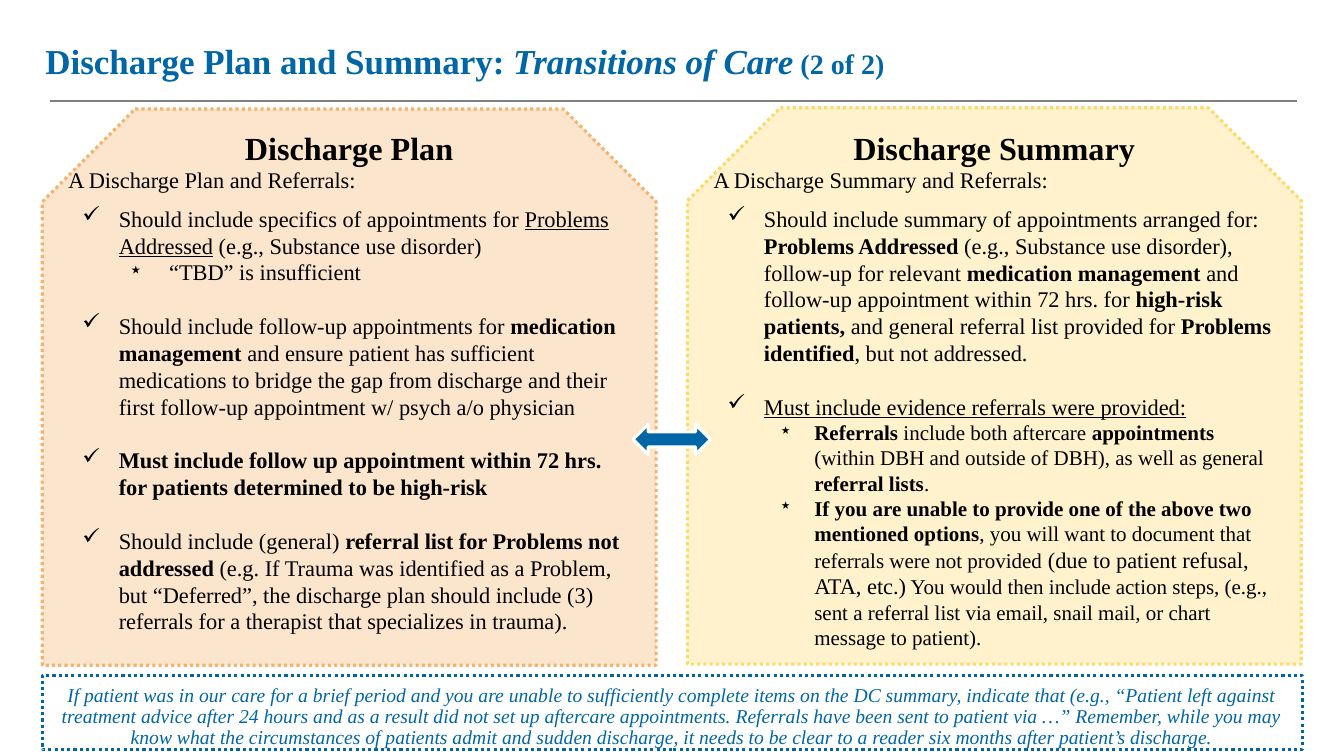
import pptx
import pptx.util
import pptx.dml.color
import pptx.enum.dml
import pptx.enum.shapes
import pptx.enum.text
import pptx.oxml.ns
import lxml.etree

Pt = pptx.util.Pt
SHAPE = pptx.enum.shapes.MSO_SHAPE
ALIGN = pptx.enum.text.PP_ALIGN
ANCHOR = pptx.enum.text.MSO_ANCHOR

COLORS = {
    "blue": "0066A6", "black": "000000", "white": "FFFFFF", "rule": "7F7F7F",
    "peach": "FCE5CD", "orange": "F6B26B", "cream": "FFF2CC", "yellow": "FFD966",
}
GAP = 19.1  # space between groups of bullets
B = {"bold": True}
U = {"underline": True}
SMALL = {"size": 15}
SMALL_B = {"size": 15, "bold": True}


def rgb(name):
    return pptx.dml.color.RGBColor.from_string(COLORS[name])


def add_run(p, text, size=16, color="black", bold=False, italic=False, underline=False):
    r = p.add_run()
    r.text = text
    r.font.name = "Times New Roman"
    r.font.size = Pt(size)
    r.font.color.rgb = rgb(color)
    r.font.bold, r.font.italic, r.font.underline = bold, italic, underline


class SlideBuilder:
    def __init__(self, prs):
        self.slide = prs.slides.add_slide(prs.slide_layouts[5])
        self.shapes = self.slide.shapes

    def frame(self, sp, inset_y=7.2, anchor=ANCHOR.TOP):
        tf = sp.text_frame
        tf.word_wrap = True
        tf.auto_size = pptx.enum.text.MSO_AUTO_SIZE.NONE
        tf.vertical_anchor = anchor
        tf.margin_left = tf.margin_right = Pt(7.2)
        tf.margin_top = tf.margin_bottom = Pt(inset_y)
        return tf

    def paragraph(self, p, runs, align=ALIGN.LEFT, before=0, spacing=None,
                  bullet=None, indent=0, hanging=0, level=0):
        if bullet:
            pPr = p._p.get_or_add_pPr()
            pPr.set("marL", str(Pt(indent)))
            pPr.set("indent", str(-Pt(hanging)))
            qn = pptx.oxml.ns.qn
            clr = lxml.etree.SubElement(pPr, qn("a:buClr"))
            lxml.etree.SubElement(clr, qn("a:srgbClr"), val=COLORS["black"])
            lxml.etree.SubElement(pPr, qn("a:buChar"), char=bullet)
        p.level = level
        p.alignment = align
        p.space_before = Pt(before)
        if spacing:
            p.line_spacing = spacing
        for text, fmt in runs:
            add_run(p, text, **fmt)

    def title(self, box, runs):
        sp = self.shapes.title
        sp.left, sp.top, sp.width, sp.height = map(Pt, box)
        tf = self.frame(sp, 3.6, ANCHOR.MIDDLE)
        self.paragraph(tf.paragraphs[0], runs, spacing=0.9)

    def shape(self, kind, box, fill, line, dotted=False, adjust=()):
        sp = self.shapes.add_shape(kind, *map(Pt, box))
        sp.shadow.inherit = False
        if fill:
            sp.fill.solid()
            sp.fill.fore_color.rgb = rgb(fill)
        else:
            sp.fill.background()
        sp.line.color.rgb = rgb(line)
        sp.line.width = Pt(2.25)
        if dotted:
            sp.line.dash_style = pptx.enum.dml.MSO_LINE.ROUND_DOT
        for i, value in enumerate(adjust):
            sp.adjustments[i] = value
        return sp

    def rule(self, x1, x2, y):
        line = self.shapes.add_connector(
            pptx.enum.shapes.MSO_CONNECTOR.STRAIGHT, Pt(x1), Pt(y), Pt(x2), Pt(y))
        line.line.color.rgb = rgb("rule")
        line.line.width = Pt(1.5)
        lxml.etree.SubElement(line._element.spPr, pptx.oxml.ns.qn("a:effectLst"))

    def text(self, box, paragraphs):
        tf = self.frame(self.shapes.add_textbox(*map(Pt, box)))
        for i, (runs, fmt) in enumerate(paragraphs):
            p = tf.add_paragraph() if i else tf.paragraphs[0]
            self.paragraph(p, runs, **fmt)


def check(*runs, before=GAP):
    return runs, {"bullet": "✓", "indent": 36, "hanging": 26, "before": before}


def star(*runs, hanging=25.2):
    return runs, {"bullet": "⋆", "indent": 72, "hanging": hanging, "level": 1}


def heading(name):
    return [
        ([(name, {"size": 23, "bold": True})], {"align": ALIGN.CENTER}),
        ([(f"A {name} and Referrals:", {})], {}),
    ]


PLAN = heading("Discharge Plan") + [
    check(("Should include specifics of appointments for ", {}),
          ("Problems Addressed", U),
          (" (e.g., Substance use disorder)", {}), before=8.2),
    star(("“TBD” is insufficient", {}), hanging=28.8),
    check(("Should include follow-up appointments for ", {}),
          ("medication management ", B),
          ("and ensure patient has sufficient medications to bridge the gap from "
           "discharge and their first follow-up appointment w/ psych a/o physician", {})),
    check(("Must include follow up appointment within 72 hrs. for patients "
           "determined to be high-risk", B)),
    check(("Should include (general) ", {}),
          ("referral list for Problems not addressed ", B),
          ("(e.g. If Trauma was identified as a Problem, but “Deferred”, the discharge "
           "plan should include (3) referrals for a therapist that specializes in "
           "trauma).", {})),
]

SUMMARY = heading("Discharge Summary") + [
    check(("Should include summary of appointments arranged for: ", {}),
          ("Problems Addressed ", B),
          ("(e.g., Substance use disorder), follow-up for relevant ", {}),
          ("medication management ", B),
          ("and follow-up appointment within 72 hrs. for ", {}),
          ("high-risk patients, ", B),
          ("and general referral list provided for ", {}),
          ("Problems identified", B),
          (", but not addressed.", {}), before=8.2),
    check(("Must include evidence referrals were provided:", U)),
    star(("Referrals", SMALL_B), (" include both aftercare ", SMALL),
         ("appointments", SMALL_B),
         (" (within DBH and outside of DBH), as well as general ", SMALL),
         ("referral lists", SMALL_B), (".", SMALL)),
    star(("If you are unable to provide one of the above two mentioned options", SMALL_B),
         (", you will want to document that referrals were not provided", SMALL),
         (" (due to patient refusal, ATA, etc.)", {}),
         (" You would then include action steps, (e.g., sent a referral list via email, "
          "snail mail, or chart message to patient).", SMALL)),
]

NOTE = ("If patient was in our care for a brief period and you are unable to sufficiently "
        "complete items on the DC summary, indicate that (e.g., “Patient left against "
        "treatment advice after 24 hours and as a result did not set up aftercare "
        "appointments. Referrals have been sent to patient via …” Remember, while you may "
        "know what the circumstances of patients admit and sudden discharge, it needs to be "
        "clear to a reader six months after patient’s discharge.")


def main():
    prs = pptx.Presentation()
    prs.slide_width, prs.slide_height = Pt(960), Pt(540)
    s = SlideBuilder(prs)

    # Title and rule
    head = {"size": 25, "color": "blue", "bold": True}
    s.title((25.2, 16.6, 766.8, 57.6), [
        ("Discharge Plan and Summary: ", head),
        ("Transitions of Care", {**head, "italic": True}),
        (" (2 of 2)", {**head, "size": 20}),
    ])
    s.rule(36, 926.6, 72)

    # Two panels
    panels = [(PLAN, "peach", "orange", 77.8, 383.8),
              (SUMMARY, "cream", "yellow", 77, 397.4)]
    for i, (content, fill, line, top, text_height) in enumerate(panels):
        left = 30.2 + i * 460.8
        s.shape(SHAPE.SNIP_2_SAME_RECTANGLE, (left, top, 438.5, 397.4), fill, line,
                dotted=True, adjust=(0.167, 0))
        s.text((left + 11.6, 84.2, 415.4, text_height), content)

    # Note along the bottom
    note = s.shape(SHAPE.RECTANGLE, (30.2, 482.4, 900, 53.3), None, "blue", dotted=True)
    s.paragraph(s.frame(note).paragraphs[0],
                [(NOTE, {"size": 14, "color": "blue", "italic": True})],
                align=ALIGN.CENTER, spacing=0.9)

    # Arrow between the panels
    s.shape(SHAPE.LEFT_RIGHT_ARROW, (452.2, 303.1, 55.4, 21.6), "blue", "white",
            adjust=(0.5, 0.5))

    prs.save("out.pptx")


if __name__ == "__main__":
    main()
